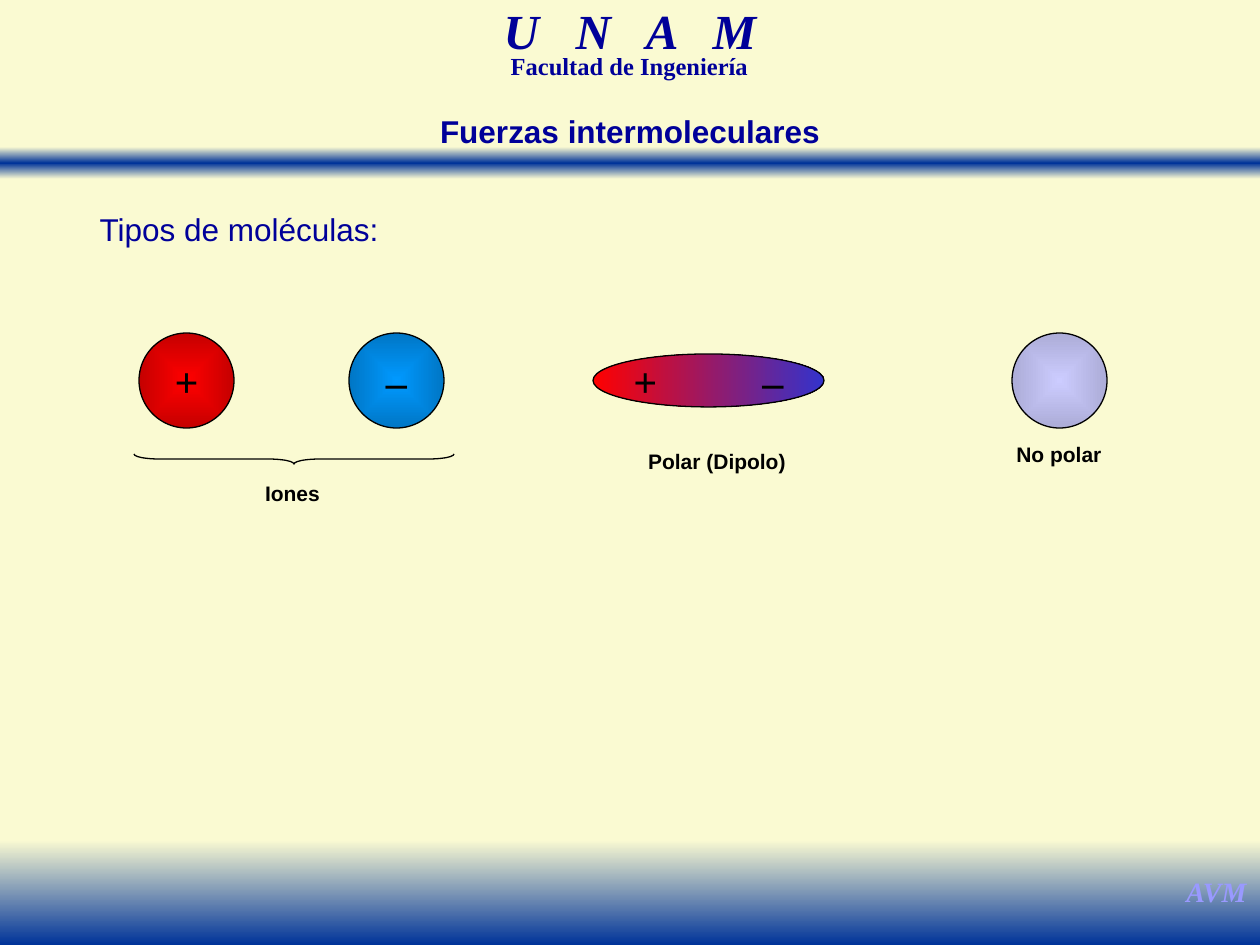
import pptx
import pptx.dml.color
import pptx.enum.shapes
import pptx.enum.text
import pptx.oxml
import pptx.oxml.ns
import pptx.util

RGBColor = pptx.dml.color.RGBColor
Shape = pptx.enum.shapes.MSO_SHAPE
Align = pptx.enum.text.PP_ALIGN
Anchor = pptx.enum.text.MSO_ANCHOR

CREAM = RGBColor(0xFA, 0xFA, 0xD2)
BLUE = RGBColor(0x00, 0x33, 0x99)
NAVY = RGBColor(0x00, 0x00, 0x99)
LILAC = RGBColor(0x99, 0x99, 0xFF)
BLACK = RGBColor(0x00, 0x00, 0x00)
RED = RGBColor(0xFF, 0x00, 0x00)
DARK_RED = RGBColor(0xC5, 0x00, 0x00)
SKY = RGBColor(0x00, 0x99, 0xFF)
DARK_SKY = RGBColor(0x00, 0x76, 0xC5)
INDIGO = RGBColor(0x33, 0x33, 0xCC)
PALE = RGBColor(0xCC, 0xCC, 0xFF)
DARK_PALE = RGBColor(0xAC, 0xAC, 0xD7)

SERIF = "Times New Roman"
SANS = "Arial"
RADIAL = ('<a:path path="shape"><a:fillToRect l="50000" t="50000" '
          'r="50000" b="50000"/></a:path>')
ACROSS = '<a:lin ang="0" scaled="1"/>'
DOWN = '<a:lin ang="5400000" scaled="1"/>'


def px(length):
    return pptx.util.Emu(round(length * 914400 / 126))


class SlideBuilder:
    def __init__(self, slide):
        self.slide = slide
        self.shapes = slide.shapes

    def start_group(self):
        self.shapes = self.slide.shapes.add_group_shape().shapes

    def end_group(self):
        self.shapes = self.slide.shapes

    def gradient(self, shape, colors, direction):
        step = 100000 // (len(colors) - 1)
        stops = "".join(
            f'<a:gs pos="{index * step}"><a:srgbClr val="{color}"/></a:gs>'
            for index, color in enumerate(colors))
        fill = pptx.oxml.parse_xml(
            f'<a:gradFill {pptx.oxml.ns.nsdecls("a")} rotWithShape="1">'
            f'<a:gsLst>{stops}</a:gsLst>{direction}</a:gradFill>')
        shape.element.spPr.find(pptx.oxml.ns.qn("a:prstGeom")).addnext(fill)

    def shape(self, kind, box, colors=None, direction=None, outlined=True):
        shape = self.shapes.add_shape(kind, *map(px, box))
        shape.shadow.inherit = False
        if outlined:
            shape.line.color.rgb = BLACK
            shape.line.width = pptx.util.Pt(0.75)
        else:
            shape.line.fill.background()
        if colors:
            self.gradient(shape, colors, direction)
        else:
            shape.fill.background()
        return shape

    def set_text(self, shape, text, size, font, color, bold=True, italic=False,
                 align=Align.CENTER, wrap=False, line_spacing=1.0, tracking=0):
        frame = shape.text_frame
        frame.word_wrap = wrap
        paragraph = frame.paragraphs[0]
        paragraph.alignment = align
        paragraph.line_spacing = line_spacing
        paragraph.space_before = pptx.util.Pt(0)
        if tracking:
            paragraph.text = text[:-1]
            paragraph.runs[0].font._element.set("spc", str(tracking * 100))
            paragraph.add_run().text = text[-1]
        else:
            paragraph.text = text
        for run in paragraph.runs:
            run.font.name = font
            run.font.size = pptx.util.Pt(size)
            run.font.bold = bold
            run.font.italic = italic
            run.font.color.rgb = color

    def text(self, box, text, size, font, color, **style):
        self.set_text(self.shapes.add_textbox(*map(px, box)),
                      text, size, font, color, **style)

    def label(self, box, text):
        self.text(box, text, 12, SANS, BLACK)

    def molecule(self, box, colors, direction, sign="", tracking=0):
        shape = self.shape(Shape.OVAL, box, colors, direction)
        if sign:
            shape.text_frame.vertical_anchor = Anchor.MIDDLE
            self.set_text(shape, sign, 24, SERIF, BLACK, tracking=tracking)

    def brace(self, box):
        shape = self.shape(Shape.LEFT_BRACE, box)
        shape.rotation = 270
        shape.adjustments[0] = 2.54
        shape.adjustments[1] = 0.5

    def placeholder(self, index, box, text, bold, align):
        shape = self.slide.placeholders[index]
        shape.left, shape.top, shape.width, shape.height = map(px, box)
        shape.element.getparent().append(shape.element)
        frame = shape.text_frame
        frame.auto_size = pptx.enum.text.MSO_AUTO_SIZE.NONE
        frame.vertical_anchor = Anchor.TOP
        properties = frame.paragraphs[0]._p.get_or_add_pPr()
        properties.set("marL", "0")
        properties.set("indent", "0")
        properties.append(pptx.oxml.parse_xml(
            f'<a:buNone {pptx.oxml.ns.nsdecls("a")}/>'))
        self.set_text(shape, text, 18, SANS, NAVY, bold=bold, align=align,
                      wrap=True)


def main():
    presentation = pptx.Presentation()
    presentation.slide_width = px(1260)
    presentation.slide_height = px(945)
    slide = presentation.slides.add_slide(presentation.slide_layouts[1])
    slide.background.fill.solid()
    slide.background.fill.fore_color.rgb = CREAM
    builder = SlideBuilder(slide)

    builder.shape(Shape.RECTANGLE, (0, 147, 1260, 32),
                  (CREAM, BLUE, CREAM), DOWN, outlined=False)
    builder.text((383, 10, 494, 54), "U N A M", 28, SERIF, NAVY,
                 italic=True, wrap=True, line_spacing=0.7, tracking=7)
    builder.text((404, 53, 451, 33), "Facultad de Ingeniería", 14, SERIF,
                 NAVY, wrap=True, line_spacing=0.7)
    builder.shape(Shape.RECTANGLE, (0, 840, 1260, 105),
                  (CREAM, BLUE), DOWN, outlined=False)
    builder.text((1173, 868, 87, 47), "AVM", 16, SERIF, LILAC, italic=True)

    builder.start_group()
    builder.molecule((139, 333, 95, 95), (RED, DARK_RED), RADIAL, "+")
    builder.molecule((349, 333, 95, 95), (SKY, DARK_SKY), RADIAL, "–")
    builder.brace((289, 299, 10, 320))
    builder.label((252, 474, 81, 38), "Iones")

    builder.start_group()
    builder.molecule((593, 354, 231, 53), (RED, INDIGO), ACROSS, "+ –", 27)
    builder.label((635, 442, 164, 38), "Polar (Dipolo)")
    builder.end_group()

    builder.molecule((1012, 333, 95, 95), (PALE, DARK_PALE), RADIAL)
    builder.label((1004, 435, 110, 38), "No polar")

    builder.placeholder(0, (357, 106, 546, 50), "Fuerzas intermoleculares",
                        True, Align.CENTER)
    builder.placeholder(1, (87, 204, 546, 50), "Tipos de moléculas:",
                        False, Align.JUSTIFY)
    presentation.save("out.pptx")


if __name__ == "__main__":
    main()
